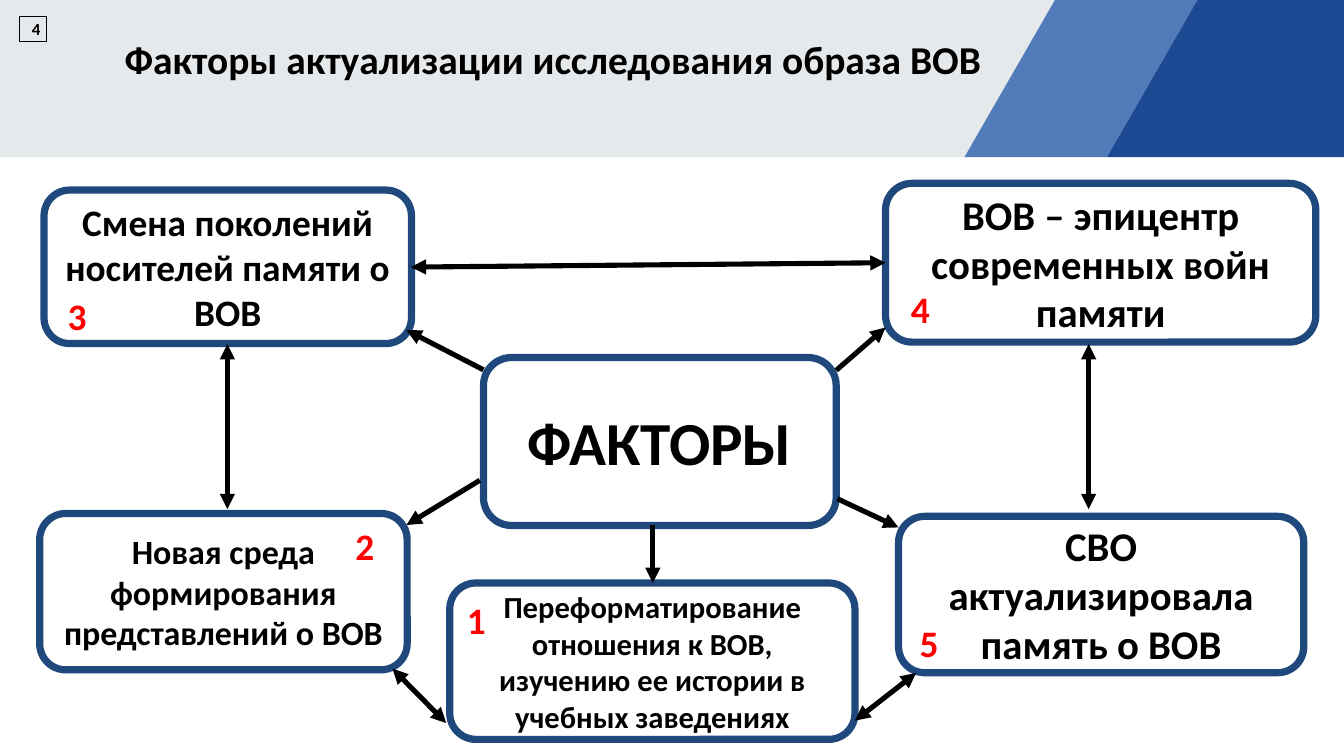
from dataclasses import dataclass

from lxml.etree import SubElement
from pptx import Presentation
from pptx.dml.color import RGBColor
from pptx.enum.shapes import MSO_CONNECTOR, MSO_SHAPE
from pptx.enum.text import MSO_ANCHOR, MSO_AUTO_SIZE, PP_ALIGN
from pptx.oxml.ns import qn
from pptx.slide import Slide
from pptx.text.text import TextFrame
from pptx.util import Cm, Pt

BLACK = RGBColor(0x00, 0x00, 0x00)
WHITE = RGBColor(0xFF, 0xFF, 0xFF)
RED = RGBColor(0xFF, 0x00, 0x00)
NAVY = RGBColor(0x1F, 0x49, 0x7D)
PALE_GREY = RGBColor(0xE6, 0xE9, 0xEB)
LIGHT_BLUE = RGBColor(0x51, 0x7B, 0xB9)
DARK_BLUE = RGBColor(0x1D, 0x49, 0x92)

FONT = "Calibri"
PAGE_WIDTH, PAGE_HEIGHT = 55.85, 31.42
HEADER_HEIGHT = 6.53
TITLE_ONLY = 5


@dataclass(frozen=True)
class Band:
    top_left: float
    top_right: float
    bottom_right: float
    bottom_left: float
    color: RGBColor


@dataclass(frozen=True)
class Card:
    text: str
    left: float
    top: float
    width: float
    height: float
    size: float


@dataclass(frozen=True)
class Arrow:
    start_x: float
    start_y: float
    end_x: float
    end_y: float
    two_way: bool = False


@dataclass(frozen=True)
class Mark:
    text: str
    left: float
    top: float


BANDS = (
    Band(0, 43.92, 40.16, 0, PALE_GREY),
    Band(43.84, 49.76, 46, 40.08, LIGHT_BLUE),
    Band(49.76, PAGE_WIDTH, PAGE_WIDTH, 46, DARK_BLUE),
)
CARDS = (
    Card("ВОВ – эпицентр современных войн памяти", 36.8, 7.62, 17.88, 6.6, 48),
    Card("Смена поколений носителей памяти о ВОВ", 1.83, 7.9, 15.27, 6.38, 44),
    Card("ФАКТОРЫ", 20.09, 14.86, 14.66, 6.98, 72),
    Card("СВО актуализировала память о ВОВ", 37.34, 21.46, 16.84, 6.5, 48),
    Card("Новая среда формирования представлений о ВОВ", 1.65, 21.34, 15.27, 6.5, 40),
    Card("Переформатирование отношения к ВОВ, изучению ее истории в учебных заведениях",
         18.69, 24.23, 16.84, 6.5, 36),
)
ARROWS = (
    Arrow(17.07, 11.1, 36.8, 10.92, True),
    Arrow(45.24, 21.16, 45.24, 14.3, True),
    Arrow(9.45, 21.16, 9.45, 14.3, True),
    Arrow(35.53, 29.95, 38.07, 27.97, True),
    Arrow(18.54, 30.05, 16.31, 27.79, True),
    Arrow(34.75, 15.39, 36.8, 13.61),
    Arrow(34.8, 20.73, 37.34, 21.92),
    Arrow(20.09, 15.37, 16.89, 13.72),
    Arrow(19.94, 19.96, 16.89, 21.82),
    Arrow(27.13, 21.82, 27.13, 24.23),
)
MARKS = (
    Mark("3", 1.83, 12.07),
    Mark("4", 36.88, 11.76),
    Mark("2", 13.79, 21.62),
    Mark("1", 18.42, 24.71),
    Mark("5", 37.24, 25.65),
)


def write(frame: TextFrame, text: str, size: float, color: RGBColor = BLACK,
          align: PP_ALIGN = PP_ALIGN.CENTER, anchor: MSO_ANCHOR = MSO_ANCHOR.MIDDLE) -> None:
    frame.text = text
    frame.word_wrap = True
    frame.auto_size = MSO_AUTO_SIZE.NONE
    frame.vertical_anchor = anchor
    para = frame.paragraphs[0]
    para.alignment = align
    font = para.runs[0].font
    font.name, font.size, font.bold = FONT, Pt(size), True
    font.color.rgb = color


def add_title(page: Slide) -> None:
    title = page.shapes.title
    title.left, title.top, title.width, title.height = Cm(1.93), Cm(1.32), Cm(40.59), Cm(3.18)
    write(title.text_frame, "Факторы актуализации исследования образа ВОВ", 46.5,
          anchor=MSO_ANCHOR.TOP)
    title.text_frame.paragraphs[0]._p.get_or_add_pPr().set("indent", str(Cm(1.5)))


def add_band(page: Slide, band: Band) -> None:
    builder = page.shapes.build_freeform(Cm(band.top_left), 0)
    builder.add_line_segments([
        (Cm(band.top_right), 0),
        (Cm(band.bottom_right), Cm(HEADER_HEIGHT)),
        (Cm(band.bottom_left), Cm(HEADER_HEIGHT)),
    ])
    shape = builder.convert_to_shape()
    shape.shadow.inherit = False
    shape.fill.solid()
    shape.fill.fore_color.rgb = band.color
    shape.line.fill.background()
    page.shapes.title.element.addprevious(shape.element)


def add_card(page: Slide, card: Card) -> None:
    shape = page.shapes.add_shape(MSO_SHAPE.ROUNDED_RECTANGLE, Cm(card.left), Cm(card.top),
                                  Cm(card.width), Cm(card.height))
    shape.shadow.inherit = False
    shape.fill.solid()
    shape.fill.fore_color.rgb = WHITE
    shape.line.color.rgb = NAVY
    shape.line.width = Pt(8.5)
    write(shape.text_frame, card.text, card.size)


def add_page_number(page: Slide) -> None:
    shape = page.shapes.add_shape(MSO_SHAPE.RECTANGLE, Cm(0.81), Cm(0.66), Cm(1.12), Cm(1.07))
    shape.shadow.inherit = False
    shape.fill.background()
    shape.line.color.rgb = BLACK
    shape.line.width = Pt(0.75)
    write(shape.text_frame, "4", 20, align=PP_ALIGN.RIGHT)


def add_arrow(page: Slide, arrow: Arrow) -> None:
    connector = page.shapes.add_connector(MSO_CONNECTOR.STRAIGHT, Cm(arrow.start_x),
                                          Cm(arrow.start_y), Cm(arrow.end_x), Cm(arrow.end_y))
    connector.line.color.rgb = BLACK
    connector.line.width = Pt(6)
    outline = connector.line._get_or_add_ln()
    for tag in ("a:headEnd", "a:tailEnd") if arrow.two_way else ("a:tailEnd",):
        SubElement(outline, qn(tag), type="triangle")
    SubElement(connector.element.spPr, qn("a:effectLst"))


def add_mark(page: Slide, mark: Mark) -> None:
    box = page.shapes.add_textbox(Cm(mark.left), Cm(mark.top), Cm(2.74), Cm(2.13))
    write(box.text_frame, mark.text, 44, RED, anchor=MSO_ANCHOR.TOP)


def main() -> None:
    deck = Presentation()
    deck.slide_width, deck.slide_height = Cm(PAGE_WIDTH), Cm(PAGE_HEIGHT)
    page = deck.slides.add_slide(deck.slide_layouts[TITLE_ONLY])
    add_title(page)
    for band in BANDS:
        add_band(page, band)
    for card in CARDS:
        add_card(page, card)
    add_page_number(page)
    for arrow in ARROWS:
        add_arrow(page, arrow)
    for mark in MARKS:
        add_mark(page, mark)
    deck.save("out.pptx")


if __name__ == "__main__":
    main()
